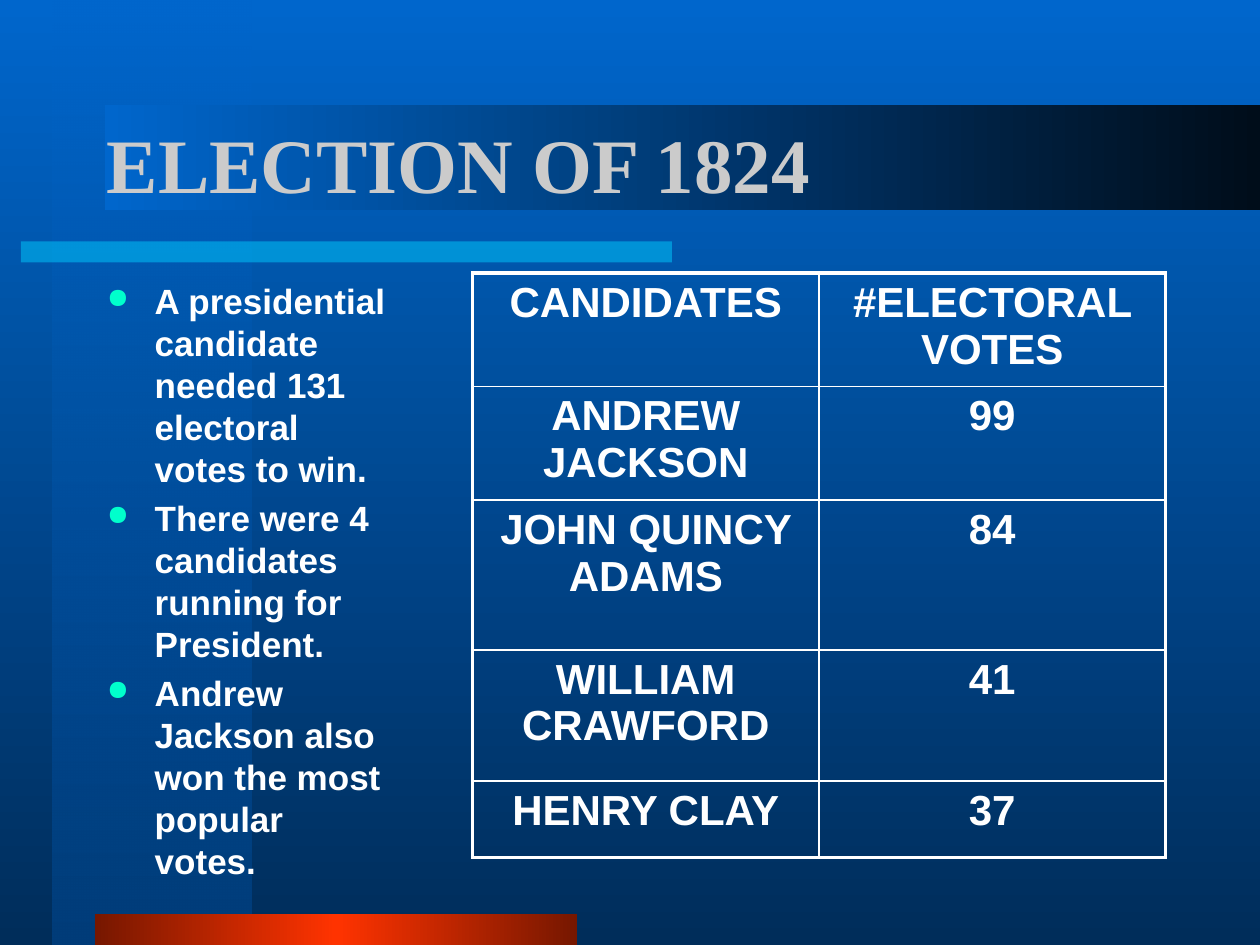
from lxml import etree
from pptx import Presentation
from pptx import util as u
from pptx.dml.color import RGBColor
from pptx.enum import shapes, text
from pptx.oxml.ns import qn

WIDTH, HEIGHT = 10, 7.5
WHITE = "FFFFFF"
BLUE = "0066CC"
COLS, ROWS = 120, 90  # grid units across and down the slide

FACTS = [
    "A presidential candidate needed 131 electoral votes to win.",
    "There were 4 candidates running for President.",
    "Andrew Jackson also won the most popular votes.",
]
RESULTS = [
    ("CANDIDATES", "#ELECTORAL VOTES"),
    ("ANDREW JACKSON", "99"),
    ("JOHN QUINCY ADAMS", "84"),
    ("WILLIAM CRAWFORD", "41"),
    ("HENRY CLAY", "37"),
]


def rgb(colour):
    return RGBColor.from_string(colour)


def add(parent, tag, **attributes):
    child = etree.SubElement(parent, qn(tag))
    for key, value in attributes.items():
        child.set(key, str(value))
    return child


def add_colour(parent, colour, opacity=100):
    node = add(parent, "a:srgbClr", val=colour)
    if opacity < 100:
        add(node, "a:alpha", val=opacity * 1000)


def blend(owner, fill, stops, angle):
    """Fill with evenly spaced (colour, opacity) stops; angle is counter-clockwise."""
    fill.gradient()
    fill.gradient_angle = angle
    stop_list = owner._element.find(".//" + qn("a:gsLst"))
    for old in list(stop_list):
        stop_list.remove(old)
    for i, (colour, opacity) in enumerate(stops):
        stop = add(stop_list, "a:gs", pos=100000 * i // (len(stops) - 1))
        add_colour(stop, colour, opacity)


class Deck:
    heading_font = "Times New Roman"
    body_font = "Arial"

    def __init__(self):
        self.file = Presentation()
        self.file.slide_width = u.Inches(WIDTH)
        self.file.slide_height = u.Inches(HEIGHT)
        self.slide = self.file.slides.add_slide(self.file.slide_layouts[6])

    def place(self, col, row, cols, rows):
        """Turn grid units into left, top, width and height."""
        x, y = self.file.slide_width / COLS, self.file.slide_height / ROWS
        return [u.Emu(round(n)) for n in (col * x, row * y, cols * x, rows * y)]

    def background(self, *colours):
        blend(self.slide, self.slide.background.fill, [(c, 100) for c in colours], 270)

    def bar(self, area, stops, angle=0):
        bar = self.slide.shapes.add_shape(shapes.MSO_SHAPE.RECTANGLE, *self.place(*area))
        bar.shadow.inherit = False
        bar.line.fill.background()
        if len(stops) > 1:
            blend(bar, bar.fill, stops, angle)
        else:
            bar.fill.solid()
            colour, opacity = stops[0]
            bar.fill.fore_color.rgb = rgb(colour)
            node = bar._element.spPr.find(".//" + qn("a:srgbClr"))
            add(node, "a:alpha", val=opacity * 1000)

    def style(self, paragraph, size, colour=WHITE, font=None):
        paragraph.font.name = font or self.body_font
        paragraph.font.size = u.Pt(size)
        paragraph.font.bold = True
        paragraph.font.color.rgb = rgb(colour)

    def text_frame(self, area):
        frame = self.slide.shapes.add_textbox(*self.place(*area)).text_frame
        frame.word_wrap = True
        return frame

    def title(self, area, words):
        frame = self.text_frame(area)
        frame.vertical_anchor = text.MSO_ANCHOR.MIDDLE
        frame.text = words
        self.style(frame.paragraphs[0], 44, "CBCBCB", self.heading_font)

    def bullets(self, area, items):
        frame = self.text_frame(area)
        frame.text = "\n".join(items)
        for paragraph in frame.paragraphs:
            self.style(paragraph, 20)
            paragraph.space_before = u.Pt(4)
            props = paragraph._p.get_or_add_pPr()
            props.set("marL", str(u.Inches(0.38)))
            props.set("indent", str(u.Inches(-0.38)))
            bullet_colour = etree.Element(qn("a:buClr"))
            add_colour(bullet_colour, "00FFCC")
            bullet_size = etree.Element(qn("a:buSzPct"), val="80000")
            bullet = etree.Element(qn("a:buChar"), char="●")
            spacing = props.find(qn("a:spcBef"))
            for node in (bullet, bullet_size, bullet_colour):
                spacing.addnext(node)

    def borders(self, cell, thick_sides):
        props = cell._tc.get_or_add_tcPr()
        for i, side in enumerate("LRTB"):
            width = u.Pt(2.25 if side in thick_sides else 1)
            line = etree.Element(qn(f"a:ln{side}"), w=str(width))
            add_colour(add(line, "a:solidFill"), WHITE)
            props.insert(i, line)

    def table(self, area, records, row_heights):
        last_row, last_col = len(records) - 1, len(records[0]) - 1
        table = self.slide.shapes.add_table(
            last_row + 1, last_col + 1, *self.place(*area)).table
        table.first_row = table.horz_banding = False
        for r, record in enumerate(records):
            table.rows[r].height = u.Inches(row_heights[r])
            for c, words in enumerate(record):
                cell = table.cell(r, c)
                cell.text = words
                cell.fill.background()
                paragraph = cell.text_frame.paragraphs[0]
                paragraph.alignment = text.PP_ALIGN.CENTER
                self.style(paragraph, 24)
                outer = {"L": c == 0, "R": c == last_col, "T": r == 0, "B": r == last_row}
                self.borders(cell, [side for side, is_outer in outer.items() if is_outer])


def main():
    deck = Deck()
    deck.background(BLUE, "002D5A")
    deck.bar((5, 0, 19, ROWS), [(BLUE, 50), ("003D7A", 100)], 270)
    deck.bar((2, 23, 62, 2), [("00CCFF", 50)])
    deck.bar((9, 87, 46, 3), [("761700", 100), ("FF3300", 100), ("761700", 100)])
    deck.bar((10, 10, 110, 10), [(BLUE, 100), ("000D1A", 100)])
    deck.title((9, 8, 102, 15), "ELECTION OF 1824")
    deck.bullets((9, 26, 29, 59), FACTS)
    deck.table((45, 26, 66, 54), RESULTS, [0.84, 0.84, 1.19, 1.04, 0.61])
    deck.file.save("out.pptx")


if __name__ == "__main__":
    main()
